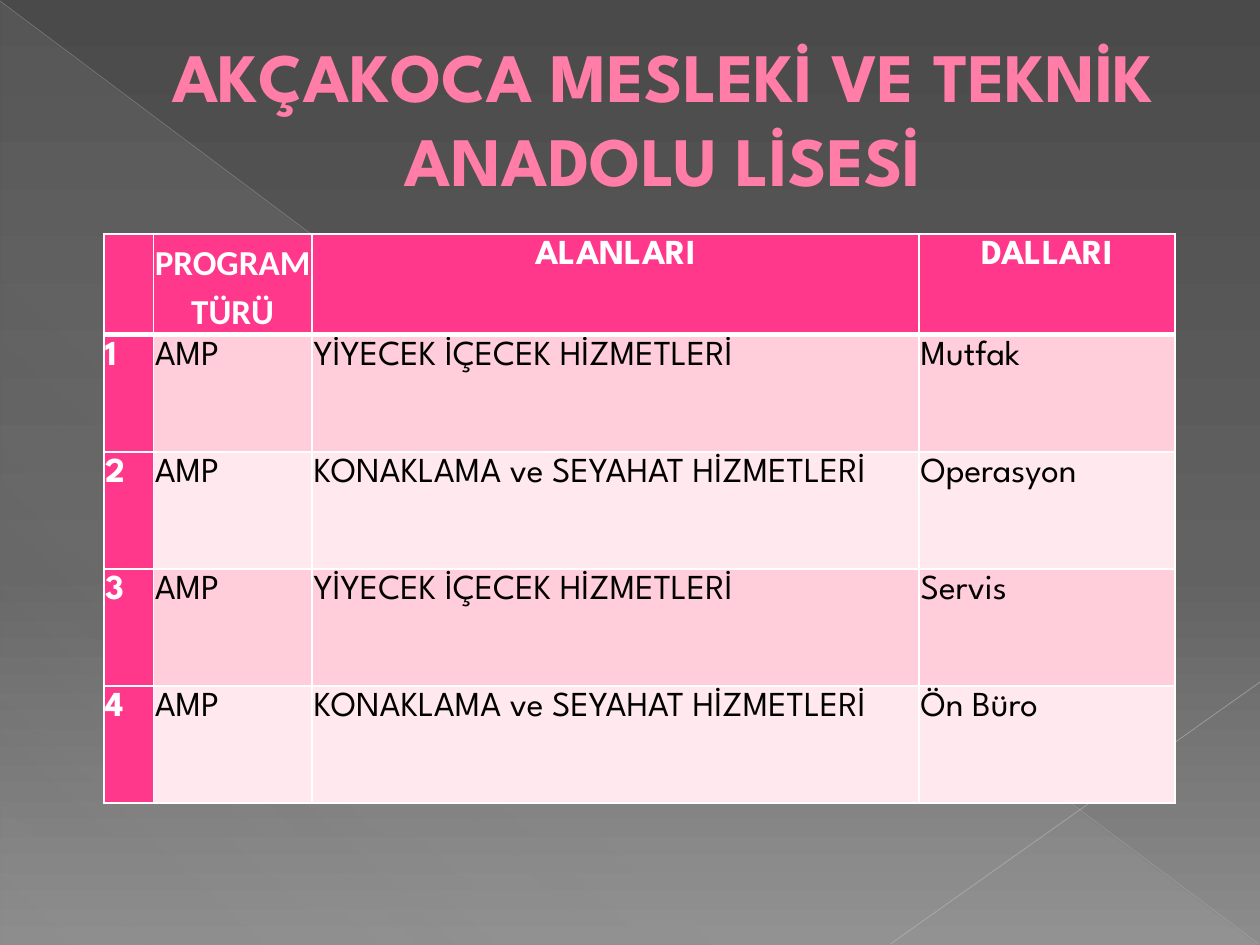
from lxml import etree
from pptx import Presentation
from pptx.dml.color import RGBColor
from pptx.enum.shapes import MSO_CONNECTOR, MSO_SHAPE
from pptx.enum.text import MSO_ANCHOR, PP_ALIGN
from pptx.oxml.ns import qn
from pptx.util import Cm, Pt

WHITE = RGBColor(0xFF, 0xFF, 0xFF)
BLACK = RGBColor(0x00, 0x00, 0x00)
PINK = RGBColor(0xFF, 0x38, 0x8C)
TITLE_PINK = RGBColor(0xFF, 0x7D, 0xA7)
TITLE_EDGE = RGBColor(0xB1, 0x27, 0x61)
BAND_DARK = RGBColor(0xFF, 0xCE, 0xDA)
BAND_LIGHT = RGBColor(0xFF, 0xE8, 0xEE)
DARK_GRAY = RGBColor(0x4A, 0x4A, 0x4A)
MID_GRAY = RGBColor(0x62, 0x62, 0x62)
LIGHT_GRAY = RGBColor(0x8C, 0x8C, 0x8C)
VEIL = RGBColor(0xD2, 0xD2, 0xD2)
LINE_GRAY = RGBColor(0xBF, 0xBF, 0xBF)
LINE_LIGHT = RGBColor(0xC6, 0xC6, 0xC6)
FONT = "League Spartan"


def add_color(parent, color, alpha=100):
    clr = etree.SubElement(parent, qn("a:srgbClr"), val=str(color))
    if alpha < 100:
        etree.SubElement(clr, qn("a:alpha"), val=str(alpha * 1000))


def set_gradient(parent, stops, angle):
    grad = etree.Element(qn("a:gradFill"), rotWithShape="1")
    gs_list = etree.SubElement(grad, qn("a:gsLst"))
    for pos, color, alpha in stops:
        gs = etree.SubElement(gs_list, qn("a:gs"), pos=str(pos * 1000))
        add_color(gs, color, alpha)
    etree.SubElement(grad, qn("a:lin"), ang=str(angle * 60000), scaled="0")
    parent.replace(parent.find(qn("a:solidFill")), grad)


prs = Presentation()
prs.slide_width = Cm(25.4)
prs.slide_height = Cm(19.05)
s = prs.slides.add_slide(prs.slide_layouts[6])

s.background.fill.solid()
bg_pr = s.background._cSld.find(qn("p:bg")).find(qn("p:bgPr"))
set_gradient(bg_pr, [(0, DARK_GRAY, 100), (60, MID_GRAY, 100), (100, LIGHT_GRAY, 100)], 90)

sp = s.shapes.add_shape(MSO_SHAPE.RIGHT_TRIANGLE, Cm(0.02), Cm(0.04), Cm(25.35), Cm(19))
sp.shadow.inherit = False
sp.line.fill.background()
sp.fill.solid()
set_gradient(sp._element.spPr, [(0, VEIL, 10), (70, VEIL, 8), (100, VEIL, 1)], 133)

for x1, y1, x2, y2, color, width, alpha in [
    (0, 0.02, 25.38, 19.03, LINE_GRAY, 0.39, 35),
    (25.4, 13.75, 17.95, 19.03, LINE_LIGHT, 0.47, 45),
]:
    line = s.shapes.add_connector(MSO_CONNECTOR.STRAIGHT, Cm(x1), Cm(y1), Cm(x2), Cm(y2))
    line.line.width = Pt(width)
    line.line.color.rgb = color
    clr = line._element.spPr.find(".//" + qn("a:srgbClr"))
    etree.SubElement(clr, qn("a:alpha"), val=str(alpha * 1000))
    etree.SubElement(line._element.spPr, qn("a:effectLst"))

tf = s.shapes.add_textbox(Cm(1.27), Cm(1.73), Cm(22.86), Cm(2.9)).text_frame
tf.word_wrap = True
tf.vertical_anchor = MSO_ANCHOR.BOTTOM
tf.margin_bottom = Cm(0.6)
tf.text = "AKÇAKOCA MESLEKİ VE TEKNİK ANADOLU LİSESİ"
p = tf.paragraphs[0]
p.alignment = PP_ALIGN.CENTER
p._p.get_or_add_pPr().set("marL", str(Cm(1.35)))
r = p.runs[0]
r.font.name = FONT
r.font.size = Pt(39.6)
r.font.bold = True
r.font.color.rgb = TITLE_PINK
edge = etree.Element(qn("a:ln"), w=str(Pt(0.5)))
add_color(etree.SubElement(edge, qn("a:solidFill")), TITLE_EDGE)
r._r.rPr.insert(0, edge)

food = "YİYECEK İÇECEK HİZMETLERİ"
lodging = "KONAKLAMA ve SEYAHAT HİZMETLERİ"
rows = [
    ("", "PROGRAM TÜRÜ", "ALANLARI", "DALLARI"),
    ("1", "AMP", food, "Mutfak"),
    ("2", "AMP", lodging, "Operasyon"),
    ("3", "AMP", food, "Servis"),
    ("4", "AMP", lodging, "Ön Büro"),
]
table = s.shapes.add_table(5, 4, Cm(2.1), Cm(4.72), Cm(21.59), Cm(11.43)).table
for col, width in zip(table.columns, (0.99, 3.2, 12.24, 5.16)):
    col.width = Cm(width)
for row, height in zip(table.rows, (2.03, 2.36, 2.36, 2.36, 2.36)):
    row.height = Cm(height)

for i, texts in enumerate(rows):
    for j, text in enumerate(texts):
        cell = table.cell(i, j)
        strong = i == 0 or j == 0
        cell.margin_left = cell.margin_right = Cm(0.03)
        cell.margin_top = cell.margin_bottom = Cm(0.03)
        tc_pr = cell._tc.get_or_add_tcPr()
        thick = {"lnB": i == 0, "lnT": i == 1}
        for side in ("lnL", "lnR", "lnT", "lnB"):
            width = Pt(3 if thick.get(side) else 1)
            ln = etree.SubElement(tc_pr, qn("a:" + side), w=str(width))
            add_color(etree.SubElement(ln, qn("a:solidFill")), WHITE)
        cell.fill.solid()
        cell.fill.fore_color.rgb = PINK if strong else BAND_DARK if i % 2 else BAND_LIGHT
        cell.text_frame.text = text
        p = cell.text_frame.paragraphs[0]
        p.line_spacing = 1.15
        p.alignment = PP_ALIGN.CENTER if i == 0 else PP_ALIGN.LEFT
        for r in p.runs:
            r.font.name = "Calibri" if (i, j) == (0, 1) else FONT
            r.font.size = Pt(20)
            r.font.bold = strong
            r.font.color.rgb = WHITE if strong else BLACK

prs.save("out.pptx")
